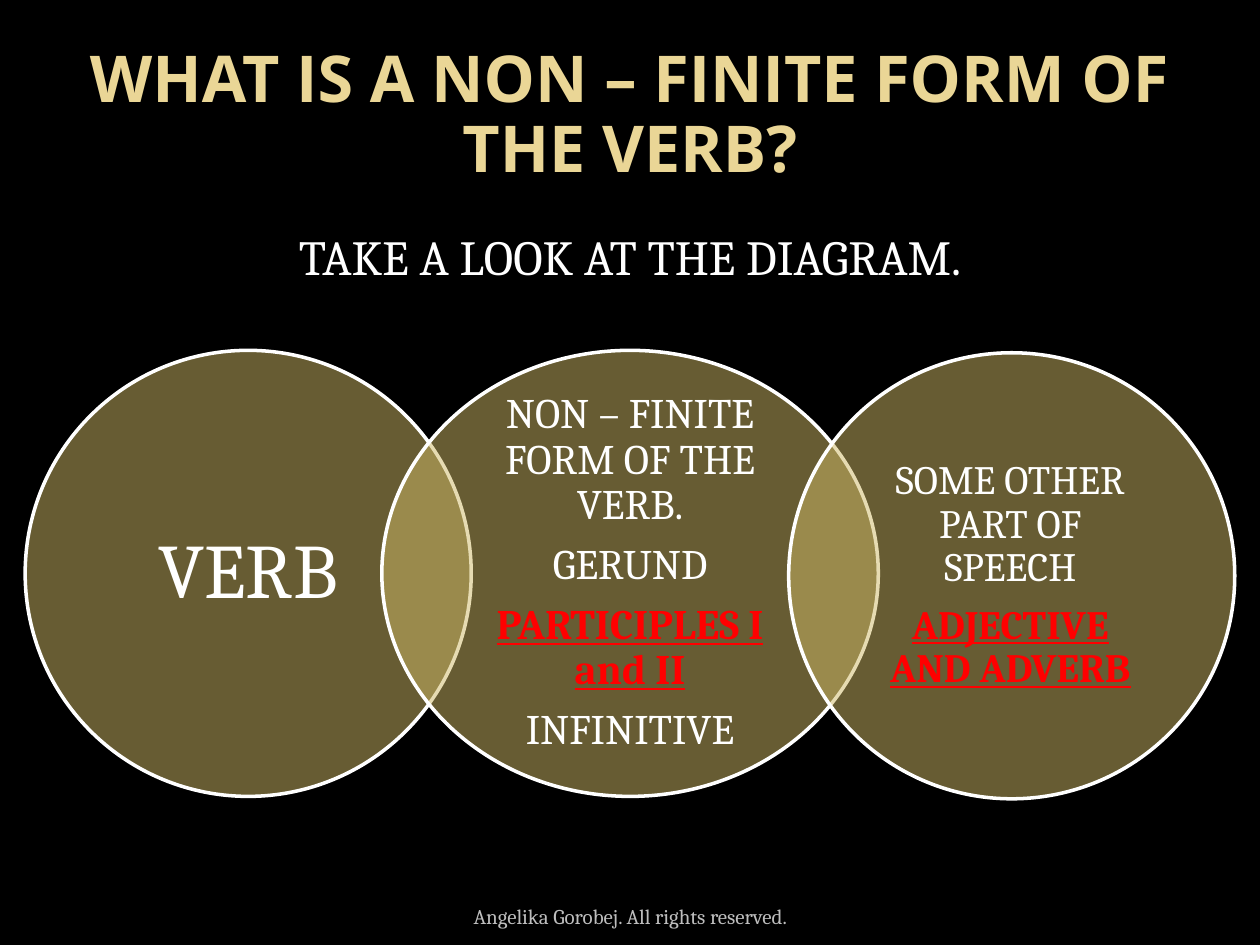
from lxml import etree
from pptx import Presentation
from pptx.dml.color import RGBColor
from pptx.enum import shapes, text
from pptx.oxml import ns
from pptx.util import Pt

BLACK = RGBColor(0x00, 0x00, 0x00)
WHITE = RGBColor(0xFF, 0xFF, 0xFF)
RED = RGBColor(0xFF, 0x00, 0x00)
GREY = RGBColor(0xBD, 0xBD, 0xBD)
GOLD = RGBColor(0xCE, 0xB9, 0x66)
PALE_GOLD = RGBColor(0xEA, 0xD6, 0x96)

BODY_FONT = "Cambria"
TITLE_FONT = "Open Sans"
CIRCLE_HEIGHT = 254.9
LABEL_HEIGHT = 180
LABEL_INSET = 13.7


def add_paragraph(frame, wording, size, color, font=BODY_FONT, bold=False, underline=False):
    is_first = not frame.paragraphs[0].runs
    paragraph = frame.paragraphs[0] if is_first else frame.add_paragraph()
    paragraph.alignment = text.PP_ALIGN.CENTER
    run = paragraph.add_run()
    run.text = wording
    run.font.name = font
    run.font.size = Pt(size)
    run.font.bold = bold
    run.font.underline = underline
    run.font.color.rgb = color
    return paragraph


def prepare_frame(shape, anchor):
    frame = shape.text_frame
    frame.word_wrap = True
    frame.auto_size = text.MSO_AUTO_SIZE.NONE
    frame.vertical_anchor = anchor
    return frame


def add_title(slide, wording):
    title = slide.shapes.title
    title.left, title.top, title.width, title.height = Pt(36), Pt(21.6), Pt(648), Pt(90)
    frame = prepare_frame(title, text.MSO_ANCHOR.MIDDLE)
    paragraph = add_paragraph(frame, wording, 36.9, PALE_GOLD, TITLE_FONT, bold=True)
    paragraph.line_spacing = 0.9


def add_text_box(slide, left, top, width, height, anchor):
    box = slide.shapes.add_textbox(Pt(left), Pt(top), Pt(width), Pt(height))
    return prepare_frame(box, anchor)


def add_circle(slide, left, top, width):
    circle = slide.shapes.add_shape(
        shapes.MSO_SHAPE.OVAL, Pt(left), Pt(top), Pt(width), Pt(CIRCLE_HEIGHT))
    circle.shadow.inherit = False
    circle.fill.solid()
    circle.fill.fore_color.rgb = GOLD
    color = circle.fill._xPr.find(ns.qn("a:solidFill"))[0]
    etree.SubElement(color, ns.qn("a:alpha"), val="50000")
    circle.line.color.rgb = WHITE
    circle.line.width = Pt(2)


def add_label(slide, left, top, width, size, lines, vertical_inset):
    frame = add_text_box(slide, left, top, width, LABEL_HEIGHT, text.MSO_ANCHOR.MIDDLE)
    frame.margin_left = frame.margin_right = Pt(LABEL_INSET)
    frame.margin_top = frame.margin_bottom = Pt(vertical_inset)
    for wording, highlighted in lines:
        color = RED if highlighted else WHITE
        paragraph = add_paragraph(
            frame, wording, size, color, bold=highlighted, underline=highlighted)
        paragraph.line_spacing = 0.9
        paragraph.space_after = Pt(round(size * 0.35, 1))


def main():
    presentation = Presentation()
    presentation.slide_width, presentation.slide_height = Pt(720), Pt(540)
    slide = presentation.slides.add_slide(presentation.slide_layouts[5])
    slide.background.fill.solid()
    slide.background.fill.fore_color.rgb = BLACK

    add_title(slide, "WHAT IS A NON – FINITE FORM OF THE VERB?")
    instruction = add_text_box(slide, 36, 126, 648, 370.8, text.MSO_ANCHOR.TOP)
    add_paragraph(instruction, "TAKE A LOOK AT THE DIAGRAM.", 28, WHITE)
    footer = add_text_box(slide, 246.2, 505.4, 228.2, 28.8, text.MSO_ANCHOR.BOTTOM)
    add_paragraph(footer, "Angelika Gorobej. All rights reserved.", 12, GREY)

    add_circle(slide, 14.4, 200.2, 254.9)
    add_label(slide, 51.8, 237.6, 180, 44, [("VERB", False)], 4.3)

    add_circle(slide, 218.2, 200.2, 283.7)
    add_label(slide, 259.9, 237.6, 200.2, 24, [
        ("NON – FINITE FORM OF THE VERB.", False),
        ("GERUND", False),
        ("PARTICIPLES I and II", True),
        ("INFINITIVE", False),
    ], 2.2)

    add_circle(slide, 450.7, 201.6, 254.9)
    add_label(slide, 487.4, 239, 180, 23, [
        ("SOME OTHER PART OF SPEECH", False),
        ("ADJECTIVE AND ADVERB", True),
    ], 2.2)

    presentation.save("out.pptx")


if __name__ == "__main__":
    main()
